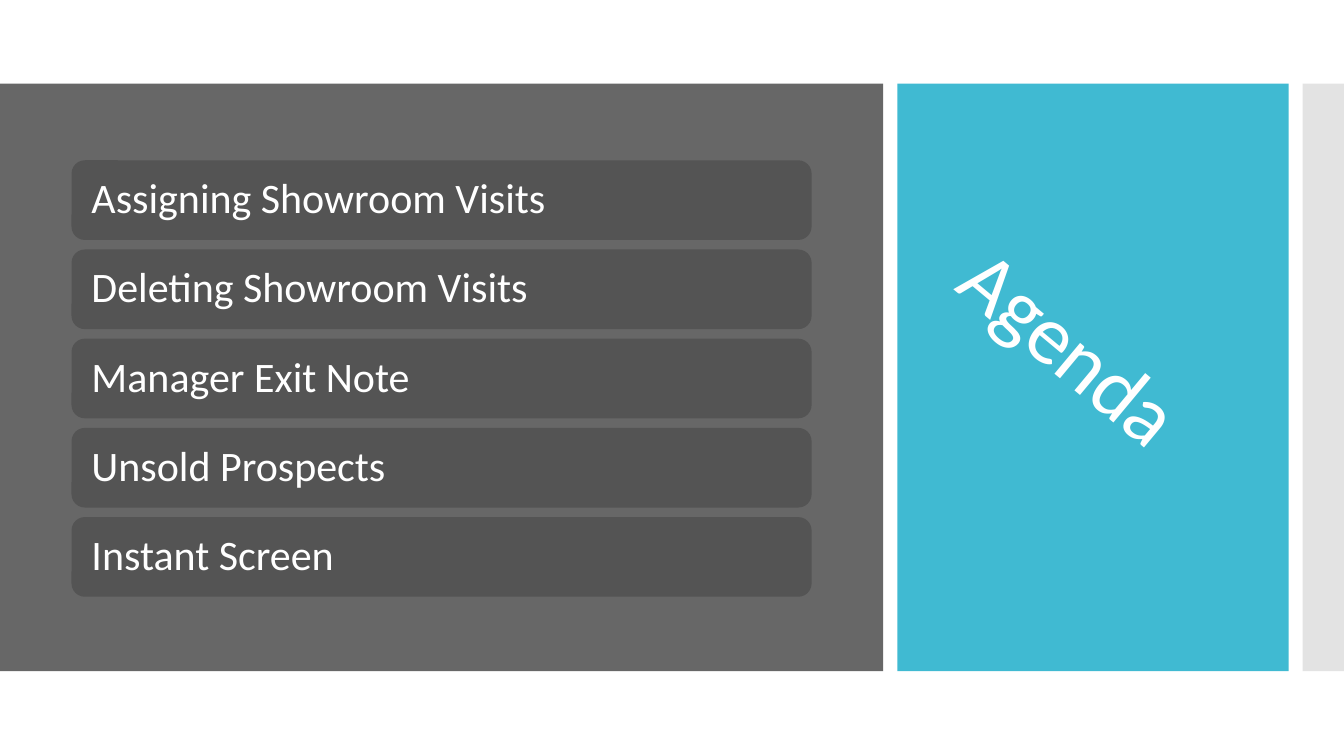
import pptx
import pptx.dml.color
import pptx.enum.shapes
import pptx.enum.text
import pptx.oxml.ns
import pptx.util
from dataclasses import dataclass
from lxml import etree

Inches = pptx.util.Inches
Shapes = pptx.enum.shapes.MSO_SHAPE

# Content
TITLE = "Agenda"
TOPICS = [
    "Assigning Showroom Visits",
    "Deleting Showroom Visits",
    "Manager Exit Note",
    "Unsold Prospects",
    "Instant Screen",
]


@dataclass(frozen=True)
class Theme:
    font: str = "Calibri"
    background: str = "FFFFFF"
    text: str = "FFFFFF"
    panel: str = "676767"
    accent: str = "40BAD2"
    edge: str = "C8C8C8"
    card: str = "545454"
    title_size: int = 60
    topic_size: int = 30


THEME = Theme()

# Layout in inches
SLIDE_WIDTH, SLIDE_HEIGHT = 13.33, 7.5
BAND_TOP, BAND_HEIGHT = 0.83, 5.83
BANDS = [  # left, width, colour, opacity in percent
    (0, 8.76, THEME.panel, 100),
    (8.9, 3.88, THEME.accent, 100),
    (12.92, SLIDE_WIDTH - 12.92, THEME.edge, 50),
]
CARD_LEFT, CARD_WIDTH, CARD_HEIGHT = 0.71, 7.34, 0.79
FIRST_CARD_TOP, LAST_CARD_TOP = 1.59, 5.13


def add_block(slide, kind, left, top, width, height, color, opacity=100):
    shape = slide.shapes.add_shape(
        kind, Inches(left), Inches(top), Inches(width), Inches(height))
    shape.shadow.inherit = False
    shape.fill.solid()
    shape.fill.fore_color.rgb = pptx.dml.color.RGBColor.from_string(color)
    shape.line.fill.background()
    if opacity < 100:
        color_element = shape.fill._xPr.find(".//" + pptx.oxml.ns.qn("a:srgbClr"))
        alpha = etree.SubElement(color_element, pptx.oxml.ns.qn("a:alpha"))
        alpha.set("val", str(opacity * 1000))
    return shape


def write_text(shape, text, *, size, margin, spacing=0):
    frame = shape.text_frame
    frame.word_wrap = True
    frame.auto_size = pptx.enum.text.MSO_AUTO_SIZE.NONE
    frame.vertical_anchor = pptx.enum.text.MSO_ANCHOR.MIDDLE
    frame.margin_left = frame.margin_right = Inches(margin)
    frame.margin_top = frame.margin_bottom = Inches(0.05)
    paragraph = frame.paragraphs[0]
    paragraph.alignment = pptx.enum.text.PP_ALIGN.LEFT
    paragraph.line_spacing = 0.9
    run = paragraph.add_run()
    run.text = text
    run.font.name = THEME.font
    run.font.size = pptx.util.Pt(size)
    run.font.color.rgb = pptx.dml.color.RGBColor.from_string(THEME.text)
    if spacing:
        run.font._element.set("spc", str(round(spacing * 100)))


def main():
    presentation = pptx.Presentation()
    presentation.slide_width = Inches(SLIDE_WIDTH)
    presentation.slide_height = Inches(SLIDE_HEIGHT)
    slide = presentation.slides.add_slide(presentation.slide_layouts[0])
    slide.background.fill.solid()
    slide.background.fill.fore_color.rgb = pptx.dml.color.RGBColor.from_string(
        THEME.background)
    subtitle = slide.placeholders[1]._element
    subtitle.getparent().remove(subtitle)

    # Panels across the slide
    for left, width, color, opacity in BANDS:
        add_block(slide, Shapes.RECTANGLE, left, BAND_TOP, width, BAND_HEIGHT,
                  color, opacity)

    # Tilted title, brought in front of the panels
    title = slide.shapes.title
    title.left, title.top = Inches(9.18), Inches(3.17)
    title.width, title.height = Inches(3.22), Inches(0.92)
    title.rotation = 39.8
    write_text(title, TITLE, size=THEME.title_size, margin=0.1, spacing=-0.6)
    slide.shapes._spTree.append(title._element)

    # Topic cards, evenly spaced
    step = (LAST_CARD_TOP - FIRST_CARD_TOP) / (len(TOPICS) - 1)
    for index, topic in enumerate(TOPICS):
        card = add_block(slide, Shapes.ROUNDED_RECTANGLE, CARD_LEFT,
                         FIRST_CARD_TOP + index * step, CARD_WIDTH, CARD_HEIGHT,
                         THEME.card)
        write_text(card, topic, size=THEME.topic_size, margin=0.16)

    presentation.save("out.pptx")


if __name__ == "__main__":
    main()
